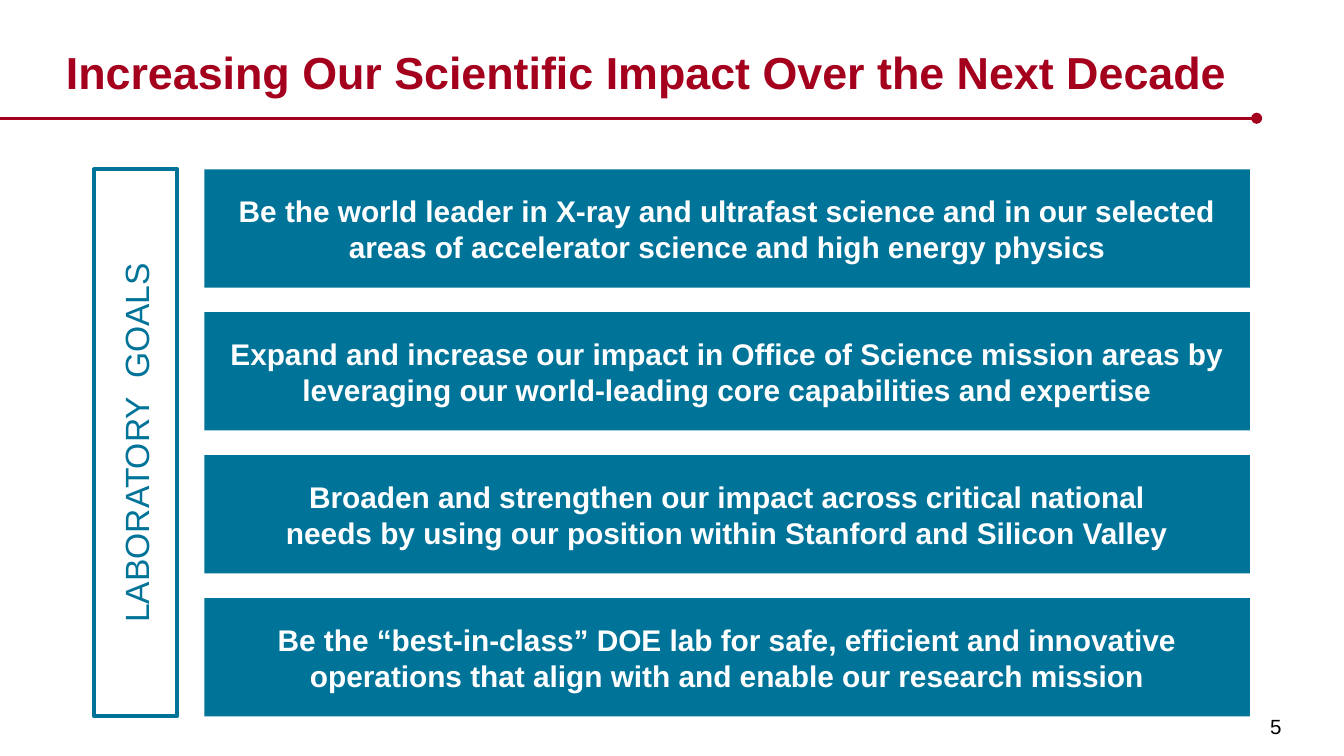
from dataclasses import dataclass

from lxml.etree import SubElement
from pptx import Presentation
from pptx.dml.color import RGBColor
from pptx.enum.shapes import MSO_CONNECTOR, MSO_SHAPE
from pptx.enum.text import MSO_ANCHOR, MSO_AUTO_SIZE, PP_ALIGN
from pptx.oxml.ns import qn
from pptx.util import Inches, Pt

# Content
TITLE = "Increasing Our Scientific Impact Over the Next Decade"
SIDE_LABEL = "LABORATORY  GOALS"
GOALS = [
    "Be the world leader in X-ray and ultrafast science and in our selected "
    "areas of accelerator science and high energy physics",
    "Expand and increase our impact in Office of Science mission areas by "
    "leveraging our world-leading core capabilities and expertise",
    "Broaden and strengthen our impact across critical national\v"
    "needs by using our position within Stanford and Silicon Valley",
    "Be the “best-in-class” DOE lab for safe, efficient and innovative "
    "operations that align with and enable our research mission",
]
PAGE_NUMBER = "5"


@dataclass(frozen=True)
class Theme:
    font: str = "Arial"
    red: RGBColor = RGBColor(0xA4, 0x00, 0x1D)
    teal: RGBColor = RGBColor(0x00, 0x73, 0x99)
    white: RGBColor = RGBColor(0xFF, 0xFF, 0xFF)
    black: RGBColor = RGBColor(0, 0, 0)
    title_size: int = 24
    label_size: int = 18
    goal_size: int = 16
    number_size: int = 11


THEME = Theme()

# Grid: one label column beside a column of equal goal rows on a 16:9 slide
SLIDE_W = 10
SLIDE_H = SLIDE_W * 9 / 16
GRID_TOP, GRID_H = 1.26, 4.07
LABEL_X, LABEL_W = 0.7, 0.62
GOAL_X, GOAL_W, GOAL_H = 1.52, 7.78, 0.88
GOAL_STEP = (GRID_H - GOAL_H) / (len(GOALS) - 1)
RULE_Y, RULE_END = 0.88, 9.35


def write(frame, text, size, color, bold=False, align=PP_ALIGN.LEFT,
          anchor=MSO_ANCHOR.MIDDLE):
    frame.text = text
    frame.word_wrap = True
    frame.auto_size = MSO_AUTO_SIZE.NONE
    frame.vertical_anchor = anchor
    paragraph = frame.paragraphs[0]
    paragraph.alignment = align
    for run in paragraph.runs:
        run.font.name = THEME.font
        run.font.size = Pt(size)
        run.font.bold = bold
        run.font.color.rgb = color


def set_margins(frame, left, top, right, bottom):
    frame.margin_left, frame.margin_top = Inches(left), Inches(top)
    frame.margin_right, frame.margin_bottom = Inches(right), Inches(bottom)


def add_box(slide, *bounds):
    box = slide.shapes.add_shape(MSO_SHAPE.RECTANGLE, *map(Inches, bounds))
    box.shadow.inherit = False
    return box


def add_title(slide):
    title = slide.shapes.title
    title.left, title.top = Inches(0.49), Inches(0.11)
    title.width, title.height = Inches(8.86), Inches(0.62)
    set_margins(title.text_frame, 0, 0, 0, 0)
    write(title.text_frame, TITLE, THEME.title_size, THEME.red, bold=True,
          anchor=MSO_ANCHOR.BOTTOM)


def add_title_rule(slide):
    rule = slide.shapes.add_connector(
        MSO_CONNECTOR.STRAIGHT, 0, Inches(RULE_Y), Inches(RULE_END), Inches(RULE_Y))
    rule.line.color.rgb = THEME.red
    rule.line.width = Pt(1.75)
    SubElement(rule.line._get_or_add_ln(), qn("a:tailEnd"), type="oval")
    SubElement(rule._element.spPr, qn("a:effectLst"))


def add_goals(slide):
    for row, goal in enumerate(GOALS):
        bar = add_box(slide, GOAL_X, GRID_TOP + row * GOAL_STEP, GOAL_W, GOAL_H)
        bar.fill.solid()
        bar.fill.fore_color.rgb = THEME.teal
        bar.line.fill.background()
        write(bar.text_frame, goal, THEME.goal_size, THEME.white, bold=True,
              align=PP_ALIGN.CENTER)


def add_side_label(slide):
    label = add_box(slide, LABEL_X, GRID_TOP, LABEL_W, GRID_H)
    label.fill.background()
    label.line.color.rgb = THEME.teal
    label.line.width = Pt(2)
    write(label.text_frame, SIDE_LABEL, THEME.label_size, THEME.teal,
          align=PP_ALIGN.CENTER)
    label.text_frame._txBody.bodyPr.set("vert", "vert270")


def add_page_number(slide):
    number = slide.shapes.add_textbox(*map(Inches, (9.37, 5.18, 0.35, 0.44)))
    set_margins(number.text_frame, 0.08, 0.06, 0.08, 0.05)
    write(number.text_frame, PAGE_NUMBER, THEME.number_size, THEME.black)


def main():
    deck = Presentation()
    deck.slide_width, deck.slide_height = Inches(SLIDE_W), Inches(SLIDE_H)
    title_only = deck.slide_layouts[5]
    slide = deck.slides.add_slide(title_only)
    add_title_rule(slide)
    add_page_number(slide)
    add_title(slide)
    add_goals(slide)
    add_side_label(slide)
    deck.save("out.pptx")


if __name__ == "__main__":
    main()
